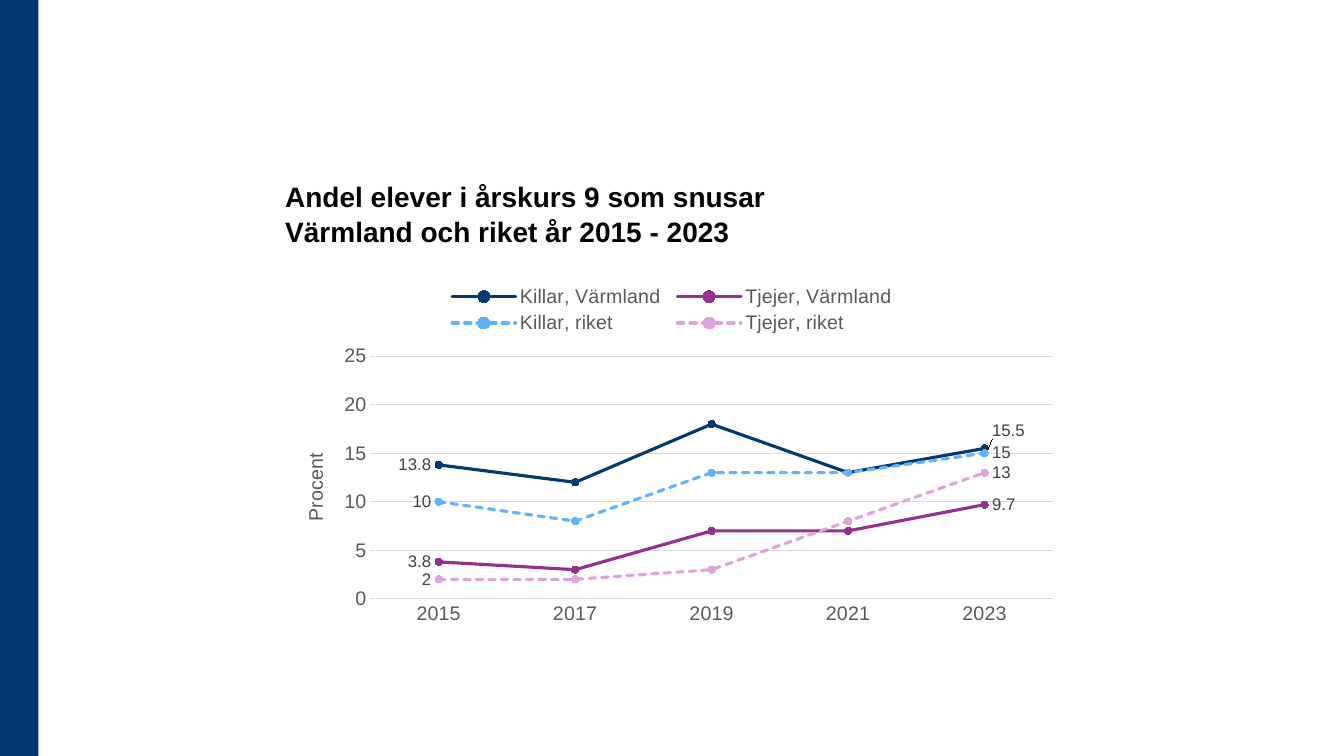
from lxml import etree
from pptx import Presentation
from pptx.chart.data import CategoryChartData
from pptx.dml.color import RGBColor
from pptx.enum.chart import (XL_CHART_TYPE, XL_LABEL_POSITION, XL_LEGEND_POSITION,
                             XL_MARKER_STYLE, XL_TICK_MARK)
from pptx.enum.dml import MSO_LINE
from pptx.enum.shapes import MSO_SHAPE
from pptx.enum.text import MSO_ANCHOR
from pptx.oxml.ns import qn
from pptx.util import Inches, Pt

RECTANGLE = MSO_SHAPE.RECTANGLE
LINE_MARKERS = XL_CHART_TYPE.LINE_MARKERS
LEFT, RIGHT = XL_LABEL_POSITION.LEFT, XL_LABEL_POSITION.RIGHT
TOP = XL_LEGEND_POSITION.TOP
CIRCLE = XL_MARKER_STYLE.CIRCLE
NO_TICK = XL_TICK_MARK.NONE
DASH = MSO_LINE.SQUARE_DOT
BOTTOM = MSO_ANCHOR.BOTTOM

FONT = "Arial"
COLORS = {
    "navy": "003A70", "purple": "93328E", "sky": "60B2FF", "pink": "DFA2DC",
    "black": "000000", "axis": "595959", "label": "404040", "grid": "D9D9D9",
}
YEARS = ["2015", "2017", "2019", "2021", "2023"]
# name, values, colour, dashed
SERIES = [
    ("Killar, Värmland", [13.8, 12, 18, 13, 15.5], "navy", False),
    ("Tjejer, Värmland", [3.8, 3, 7, 7, 9.7], "purple", False),
    ("Killar, riket", [10, 8, 13, 13, 15], "sky", True),
    ("Tjejer, riket", [2, 2, 3, 8, 13], "pink", True),
]


def style_font(font, size, color, bold=False):
    font.name, font.size, font.bold = FONT, Pt(size), bold
    font.color.rgb = RGBColor.from_string(COLORS[color])


def place(element, index, **settings):
    """Give a chart part a manual layout as fractions of the chart."""
    for old in element.findall(qn("c:layout")):
        element.remove(old)
    layout = etree.Element(qn("c:layout"))
    manual = etree.SubElement(layout, qn("c:manualLayout"))
    for name, value in settings.items():
        etree.SubElement(manual, qn("c:" + name)).set("val", str(value))
    element.insert(index, layout)


deck = Presentation()
deck.slide_width, deck.slide_height = Inches(13.33), Inches(7.5)
page = deck.slides.add_slide(deck.slide_layouts[6])

# Side band
band = page.shapes.add_shape(RECTANGLE, 0, 0, Inches(0.38), Inches(7.5))
band.shadow.inherit = False
band.fill.solid()
band.fill.fore_color.rgb = RGBColor.from_string(COLORS["navy"])
band.line.fill.background()

# Title
box = page.shapes.add_textbox(Inches(2.73), Inches(1.06), Inches(7.87), Inches(1.45))
frame = box.text_frame
frame.word_wrap = True
frame.vertical_anchor = BOTTOM
frame.text = "Andel elever i årskurs 9 som snusar\vVärmland och riket år 2015 - 2023"
paragraph = frame.paragraphs[0]
paragraph.line_spacing = 1.05
for span in paragraph.runs:
    style_font(span.font, 20, "black", bold=True)

# Chart
data = CategoryChartData()
data.categories = YEARS
for name, values, color, dashed in SERIES:
    data.add_series(name, values)
chart = page.shapes.add_chart(LINE_MARKERS, Inches(2.73), Inches(2.72),
                              Inches(7.87), Inches(3.54), data).chart
chart.has_title = False
style_font(chart.font, 14, "black")
plot = chart.plots[0]
plot.vary_by_categories = False
place(chart._chartSpace.chart.plotArea, 0, layoutTarget="inner", xMode="edge",
      yMode="edge", x=0.12, y=0.23, w=0.86, h=0.68)

# Legend in two columns
chart.has_legend = True
legend = chart.legend
legend.position = TOP
legend.include_in_layout = False
style_font(legend.font, 14, "axis")
place(legend._element, 1, xMode="edge", yMode="edge", x=0.21, y=0.02, w=0.58, h=0.16)

# Axes
years, percent = chart.category_axis, chart.value_axis
for axis in (years, percent):
    axis.major_tick_mark = axis.minor_tick_mark = NO_TICK
    style_font(axis.tick_labels.font, 14, "axis")
percent.minimum_scale, percent.maximum_scale, percent.major_unit = 0, 25, 5
percent.has_major_gridlines = True
percent.format.line.fill.background()
for line in (years.format.line, percent.major_gridlines.format.line):
    line.color.rgb = RGBColor.from_string(COLORS["grid"])
    line.width = Pt(0.75)
title = percent.axis_title
title.text_frame.text = "Procent"
title.text_frame._txBody.bodyPr.set("rot", "-5400000")
style_font(title.text_frame.paragraphs[0].runs[0].font, 14, "axis")
place(title._element, 1, xMode="edge", yMode="edge", x=0.03, y=0.49)

# Lines, markers and labels at the first and last year
for series, (name, values, color, dashed) in zip(plot.series, SERIES):
    shade = RGBColor.from_string(COLORS[color])
    series.smooth = False
    line = series.format.line
    line.color.rgb = shade
    line.width = Pt(2.25)
    line._get_or_add_ln().set("cap", "rnd")
    if dashed:
        line.dash_style = DASH
    marker = series.marker
    marker.style, marker.size = CIRCLE, 5
    marker.format.fill.solid()
    marker.format.fill.fore_color.rgb = shade
    marker.format.line.color.rgb = shade
    series.data_labels.show_value = False
    for index, position in ((0, LEFT), (len(YEARS) - 1, RIGHT)):
        label = series.points[index].data_label
        style_font(label.font, 12, "label")
        label.position = position

# Lift the topmost end label clear of the one below
top_label = plot.series[0]._element.findall(".//" + qn("c:dLbl"))[-1]
place(top_label, 1, x=0, y=-0.05)

deck.save("out.pptx")
